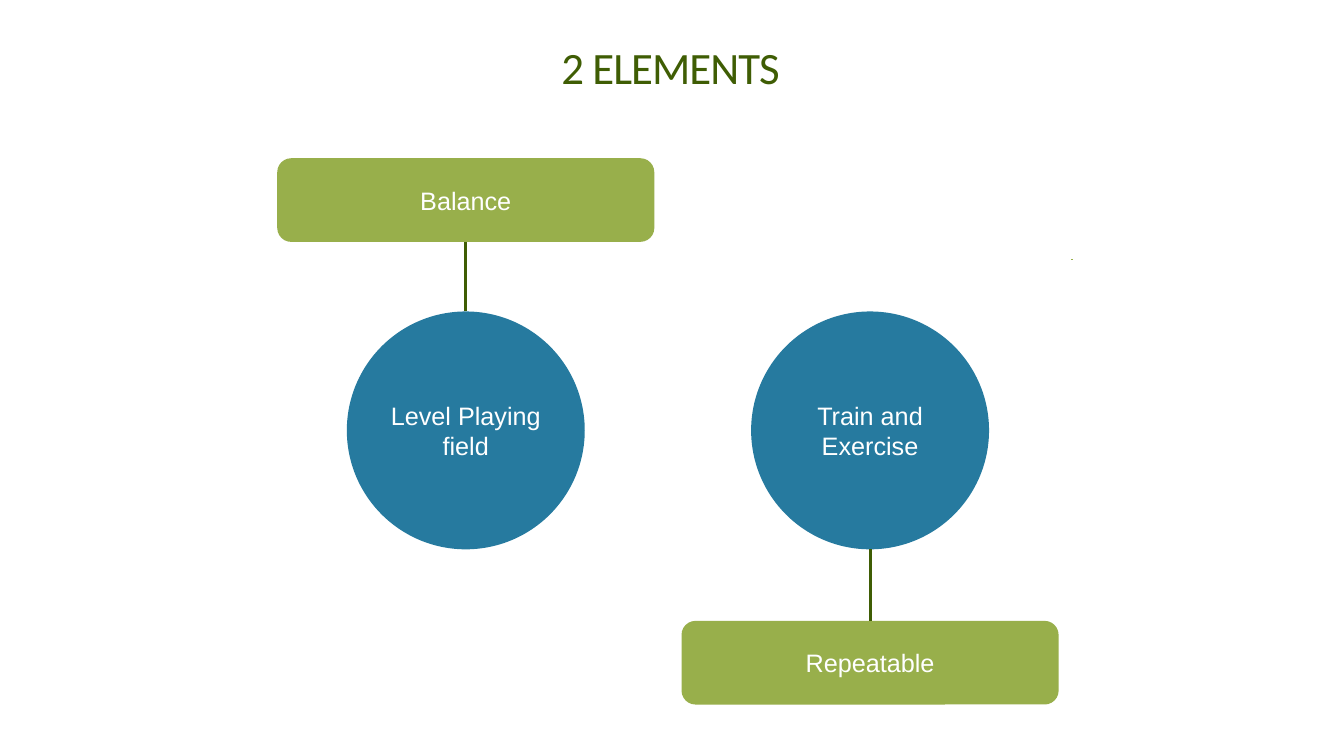
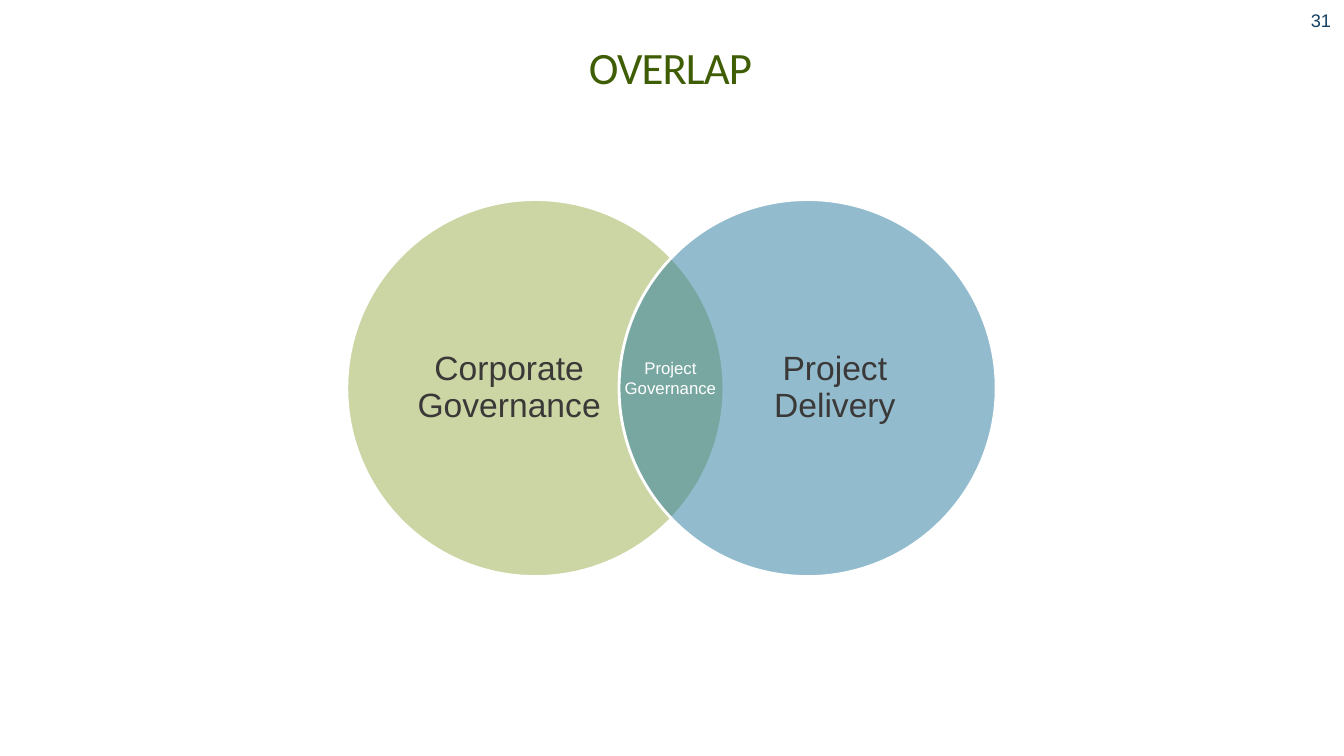
from dataclasses import dataclass

import lxml.etree
import pptx
import pptx.dml.color
import pptx.enum.shapes
import pptx.enum.text
import pptx.oxml.ns
import pptx.util

PX = 9144
SHAPE = pptx.enum.shapes.MSO_SHAPE
ALIGN = pptx.enum.text.PP_ALIGN
ANCHOR = pptx.enum.text.MSO_ANCHOR
qn = pptx.oxml.ns.qn


@dataclass(frozen=True)
class Theme:
    green: str = "98AF4B"
    blue: str = "267A9F"
    dark_green: str = "3F5D04"
    navy: str = "134063"
    charcoal: str = "3B3838"
    white: str = "FFFFFF"
    title_font: str = "Calibri"
    body_font: str = "Arial"
    title_size: int = 32
    venn_size: int = 24
    body_size: int = 18
    number_size: int = 13
    small_size: int = 12


THEME = Theme()


@dataclass(frozen=True)
class Box:
    left: int
    top: int
    width: int
    height: int

    @property
    def center(self) -> int:
        return self.left + self.width // 2

    @property
    def bottom(self) -> int:
        return self.top + self.height

    def emu(self) -> list[int]:
        return [px(v) for v in (self.left, self.top, self.width, self.height)]


@dataclass(frozen=True)
class Style:
    size: int
    color: str
    font: str = THEME.body_font
    align: ALIGN = ALIGN.CENTER
    anchor: ANCHOR = ANCHOR.MIDDLE
    inset_x: int = 0
    inset_y: int = 0
    line_spacing: float | None = None
    tracking: int | None = None


@dataclass(frozen=True)
class Element:
    circle_text: str
    label_text: str
    center: int
    label_top: int


@dataclass(frozen=True)
class VennSet:
    text: str
    color: str
    circle_left: int
    text_left: int


TITLE = Style(THEME.title_size, THEME.dark_green, THEME.title_font,
              anchor=ANCHOR.TOP, tracking=-70)
LABEL = Style(THEME.body_size, THEME.white)
VENN = Style(THEME.venn_size, THEME.charcoal, line_spacing=0.9)
OVERLAP = Style(THEME.small_size, THEME.white, anchor=ANCHOR.TOP)
NUMBER = Style(THEME.number_size, THEME.navy, align=ALIGN.RIGHT,
               inset_x=13, inset_y=7)

ELEMENTS = (
    Element("Level Playing field", "Balance", 462, 157),
    Element("Train and Exercise", "Repeatable", 863, 616),
)
VENN_SETS = (
    VennSet("Corporate Governance", THEME.green, 344, 397),
    VennSet("Project Delivery", THEME.blue, 614, 720),
)


def px(value: int) -> int:
    return pptx.util.Emu(value * PX)


def rgb(color: str) -> pptx.dml.color.RGBColor:
    return pptx.dml.color.RGBColor.from_string(color)


def write(sp, text: str, style: Style) -> None:
    tf = sp.text_frame
    tf.word_wrap = True
    tf.vertical_anchor = style.anchor
    tf.margin_left = tf.margin_right = px(style.inset_x)
    tf.margin_top = tf.margin_bottom = px(style.inset_y)
    p = tf.paragraphs[0]
    p.alignment = style.align
    if style.line_spacing is not None:
        p.line_spacing = style.line_spacing
    p.font.name = style.font
    p.font.size = pptx.util.Pt(style.size)
    p.font.color.rgb = rgb(style.color)
    r = p.add_run()
    r.text = text
    if style.tracking is not None:
        r.font._element.set("spc", str(style.tracking))


def add_text(s, box: Box, text: str, style: Style):
    sp = s.shapes.add_textbox(*box.emu())
    write(sp, text, style)
    return sp


def add_filled(s, kind: SHAPE, box: Box, color: str):
    sp = s.shapes.add_shape(kind, *box.emu())
    sp.shadow.inherit = False
    sp.fill.solid()
    sp.fill.fore_color.rgb = rgb(color)
    sp.line.fill.background()
    return sp


def add_line(s, x1: int, y1: int, x2: int, y2: int, color: str, width: float):
    line = s.shapes.add_connector(pptx.enum.shapes.MSO_CONNECTOR.STRAIGHT,
                                  px(x1), px(y1), px(x2), px(y2))
    line.line.color.rgb = rgb(color)
    line.line.width = pptx.util.Pt(width)
    lxml.etree.SubElement(line._element.spPr, qn("a:effectLst"))
    return line


def add_slide(prs, title: str):
    s = prs.slides.add_slide(prs.slide_layouts[6])
    add_text(s, Box(65, 39, 1200, 83), title, TITLE)
    return s


def add_element(s, element: Element) -> None:
    circle = Box(element.center - 118, 309, 236, 236)
    label = Box(element.center - 187, element.label_top, 374, 83)
    write(add_filled(s, SHAPE.OVAL, circle, THEME.blue),
          element.circle_text, LABEL)
    label_sp = add_filled(s, SHAPE.ROUNDED_RECTANGLE, label, THEME.green)
    write(label_sp, element.label_text, LABEL)
    above = label.top < circle.top
    circle_y = circle.top if above else circle.bottom
    label_y = label.bottom if above else label.top
    line = add_line(s, circle.center, circle_y, label.center, label_y,
                    THEME.dark_green, 2.25)
    line.end_connect(label_sp, 2 if above else 0)


def add_venn_set(s, venn: VennSet) -> None:
    sp = add_filled(s, SHAPE.OVAL, Box(venn.circle_left, 198, 374, 374),
                    venn.color)
    fill_color = sp._element.spPr.find(qn("a:solidFill"))[0]
    lxml.etree.SubElement(fill_color, qn("a:alpha")).set("val", "50000")
    sp.line.color.rgb = rgb(THEME.white)
    sp.line.width = pptx.util.Pt(2)
    add_text(s, Box(venn.text_left, 242, 216, 286), venn.text, VENN)


def build_elements(prs) -> None:
    s = add_slide(prs, "2 ELEMENTS")
    add_line(s, 1064, 257, 1062, 257, THEME.green, 0.75)
    for element in ELEMENTS:
        add_element(s, element)


def build_overlap(prs) -> None:
    s = add_slide(prs, "OVERLAP")
    for venn in VENN_SETS:
        add_venn_set(s, venn)
    add_text(s, Box(1044, 0, 289, 40), "31", NUMBER)
    sp = add_text(s, Box(615, 355, 100, 40), "Project Governance", OVERLAP)
    sp.text_frame.auto_size = pptx.enum.text.MSO_AUTO_SIZE.SHAPE_TO_FIT_TEXT


def main() -> None:
    prs = pptx.Presentation()
    prs.slide_width, prs.slide_height = px(1333), px(750)
    build_elements(prs)
    build_overlap(prs)
    prs.save("out.pptx")


if __name__ == "__main__":
    main()
